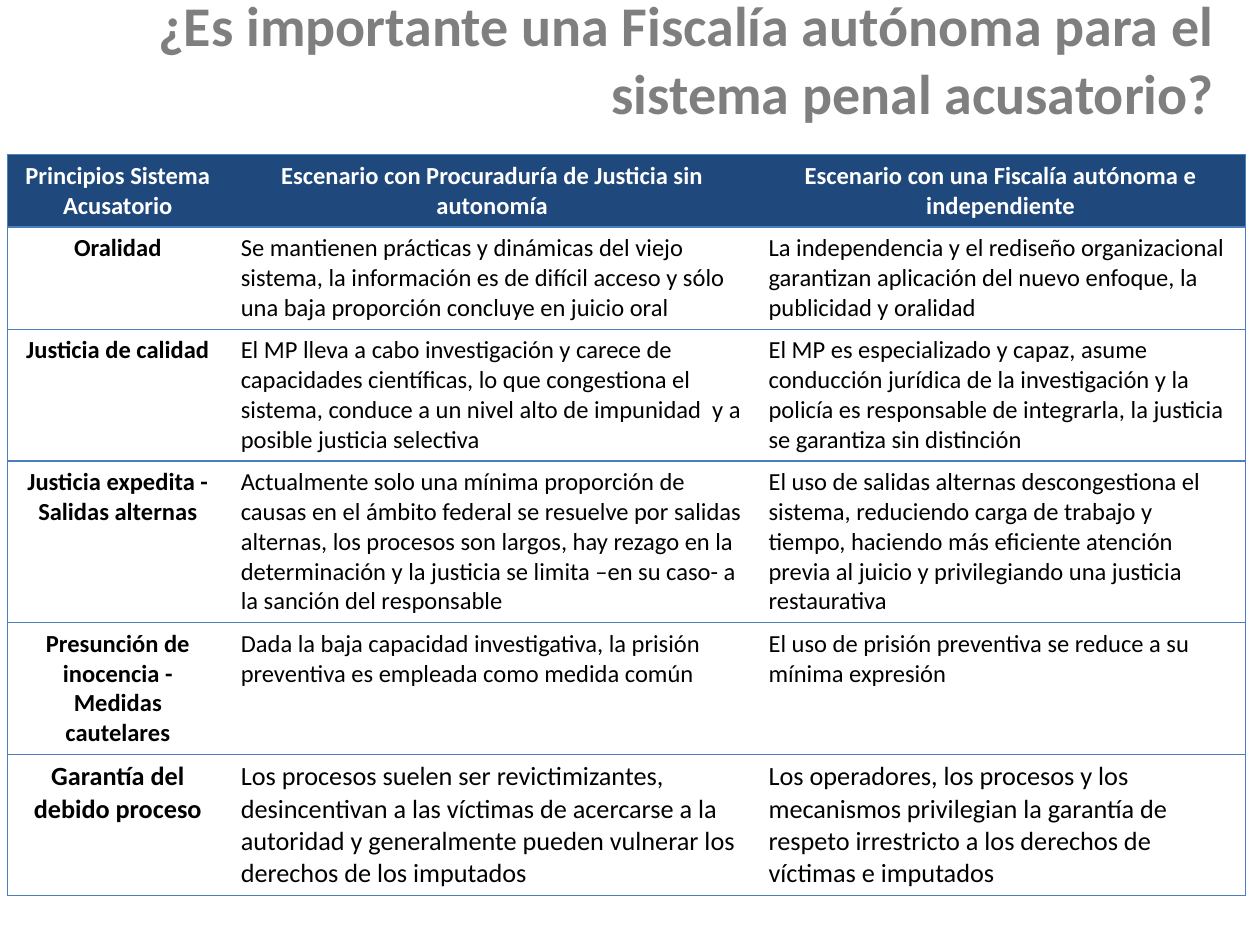
from dataclasses import dataclass

import lxml.etree
import pptx
import pptx.dml.color
import pptx.enum.text
import pptx.oxml.ns
import pptx.table
import pptx.text.text
import pptx.util

Cm = pptx.util.Cm
Align = pptx.enum.text.PP_ALIGN
FONT = "Calibri"
COLOURS = {
    "title": "7F7F7F",
    "header": "1F497D",
    "header_text": "FFFFFF",
    "text": "000000",
    "border": "4B7EBC",
}
COLUMN_WIDTHS = (4.45, 10.64, 9.86)


@dataclass
class Row:
    height: float
    texts: tuple[str, str, str]
    size: int = 14
    header: bool = False


ROWS = [
    Row(1.45, (
        "Principios Sistema Acusatorio",
        "Escenario con Procuraduría de Justicia sin autonomía",
        "Escenario con una Fiscalía autónoma e independiente",
    ), header=True),
    Row(2.05, (
        "Oralidad",
        "Se mantienen prácticas y dinámicas del viejo sistema, la información es de "
        "difícil acceso y sólo una baja proporción concluye en juicio oral",
        "La independencia y el rediseño organizacional garantizan aplicación del nuevo "
        "enfoque, la publicidad y oralidad",
    )),
    Row(2.65, (
        "Justicia de calidad",
        "El MP lleva a cabo investigación y carece de capacidades científicas, lo que "
        "congestiona el sistema, conduce a un nivel alto de impunidad  y a posible "
        "justicia selectiva",
        "El MP es especializado y capaz, asume conducción jurídica de la investigación y "
        "la policía es responsable de integrarla, la justicia se garantiza sin distinción",
    )),
    Row(3.25, (
        "Justicia expedita -\nSalidas alternas",
        "Actualmente solo una mínima proporción de causas en el ámbito federal se resuelve "
        "por salidas alternas, los procesos son largos, hay rezago en la determinación y "
        "la justicia se limita –en su caso- a la sanción del responsable",
        "El uso de salidas alternas descongestiona el sistema, reduciendo carga de trabajo "
        "y tiempo, haciendo más eficiente atención previa al juicio y privilegiando una "
        "justicia restaurativa",
    )),
    Row(2.65, (
        "Presunción de inocencia - Medidas cautelares",
        "Dada la baja capacidad investigativa, la prisión preventiva es empleada como "
        "medida común",
        "El uso de prisión preventiva se reduce a su mínima expresión",
    )),
    Row(2.8, (
        "Garantía del debido proceso",
        "Los procesos suelen ser revictimizantes, desincentivan a las víctimas de acercarse "
        "a la autoridad y generalmente pueden vulnerar los derechos de los imputados",
        "Los operadores, los procesos y los mecanismos privilegian la garantía de respeto "
        "irrestricto a los derechos de víctimas e imputados",
    ), size=15),
]


def format_text(text_frame: pptx.text.text.TextFrame, size: int, colour: str,
                bold: bool, alignment: Align) -> None:
    for paragraph in text_frame.paragraphs:
        paragraph.alignment = alignment
        for run in paragraph.runs:
            run.font.name = FONT
            run.font.size = pptx.util.Pt(size)
            run.font.bold = bold
            run.font.color.rgb = pptx.dml.color.RGBColor.from_string(COLOURS[colour])


def set_borders(cell: pptx.table._Cell, sides: str) -> None:
    """Draw the sides named by their letters (L, R, T, B) and clear the others."""
    qn = pptx.oxml.ns.qn
    properties = cell._tc.get_or_add_tcPr()
    for index, side in enumerate("LRTB"):
        line = lxml.etree.Element(qn(f"a:ln{side}"), w=str(pptx.util.Pt(0.75)))
        if side in sides:
            fill = lxml.etree.SubElement(line, qn("a:solidFill"))
            lxml.etree.SubElement(fill, qn("a:srgbClr"), val=COLOURS["border"])
        else:
            lxml.etree.SubElement(line, qn("a:noFill"))
        properties.insert(index, line)


def fill_cell(cell: pptx.table._Cell, row: Row, column: int) -> None:
    cell.text_frame.text = row.texts[column]
    is_label = row.header or column == 0
    format_text(cell.text_frame, row.size, "header_text" if row.header else "text",
                is_label, Align.CENTER if is_label else Align.LEFT)
    if row.header:
        cell.fill.solid()
        cell.fill.fore_color.rgb = pptx.dml.color.RGBColor.from_string(COLOURS["header"])
    else:
        cell.fill.background()
    set_borders(cell, "TB" + {0: "L", len(COLUMN_WIDTHS) - 1: "R"}.get(column, ""))


def add_title(slide: pptx.slide.Slide) -> None:
    title = slide.shapes.title
    title.left, title.top, title.width, title.height = Cm(0.64), Cm(0.28), Cm(24.1), Cm(1.78)
    text_frame = title.text_frame
    text_frame.text = "¿Es importante una Fiscalía autónoma para el sistema penal acusatorio?"
    text_frame.auto_size = pptx.enum.text.MSO_AUTO_SIZE.NONE
    text_frame.vertical_anchor = pptx.enum.text.MSO_ANCHOR.MIDDLE
    format_text(text_frame, 32, "title", True, Align.RIGHT)


def add_comparison_table(slide: pptx.slide.Slide) -> None:
    table = slide.shapes.add_table(
        len(ROWS), len(COLUMN_WIDTHS), Cm(0.15), Cm(3.12),
        Cm(sum(COLUMN_WIDTHS)), Cm(sum(row.height for row in ROWS)),
    ).table
    table.first_row = table.horz_banding = False
    for column, width in enumerate(COLUMN_WIDTHS):
        table.columns[column].width = Cm(width)
    for index, row in enumerate(ROWS):
        table.rows[index].height = Cm(row.height)
        for column in range(len(COLUMN_WIDTHS)):
            fill_cell(table.cell(index, column), row, column)


def main() -> None:
    presentation = pptx.Presentation()
    presentation.slide_width, presentation.slide_height = Cm(25.4), Cm(19.05)
    slide = presentation.slides.add_slide(presentation.slide_layouts[5])
    add_title(slide)
    add_comparison_table(slide)
    presentation.save("out.pptx")


if __name__ == "__main__":
    main()
